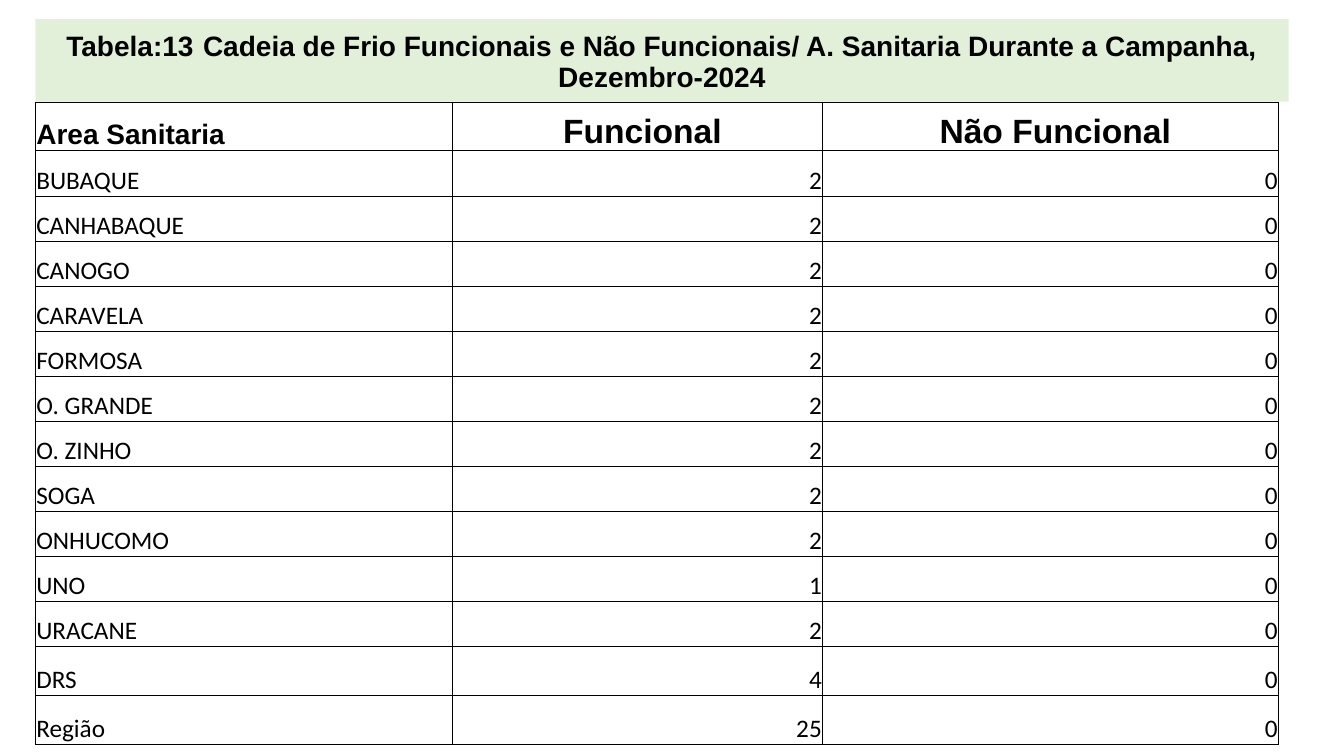
from lxml import etree
from pptx import Presentation
from pptx.dml.color import RGBColor
from pptx.enum.text import MSO_ANCHOR, MSO_AUTO_SIZE, PP_ALIGN
from pptx.oxml.ns import qn
from pptx.util import Inches, Pt

LEFT, CENTER, RIGHT = PP_ALIGN.LEFT, PP_ALIGN.CENTER, PP_ALIGN.RIGHT
MIDDLE, BOTTOM = MSO_ANCHOR.MIDDLE, MSO_ANCHOR.BOTTOM
NO_AUTOFIT = MSO_AUTO_SIZE.NONE
TITLE_ONLY_LAYOUT = 5

COLORS = {"text": "000000", "border": "000000", "banner": "E2F0D9", "summary": "FFFFFF"}
HEADING_FONT, BODY_FONT = "Arial", "Calibri"

# Positions and sizes are percentages of the slide's width or height.
MARGIN = 2.63
BANNER_TOP, BANNER_WIDTH, BANNER_HEIGHT = 2.53, 93.25, 10.93
TABLE_TOP = 13.47
COLUMN_WIDTHS = [31.06, 27.53, 33.91]
TALL_ROW, AREA_ROW = 6.48, 5.96

TITLE_RUNS = [
    ("Tabela:13", 20),
    (" ", 24),
    ("Cadeia de Frio Funcionais e Não Funcionais/ A. Sanitaria "
     "Durante a Campanha, Dezembro-2024", 20),
]
HEADERS = [("Area Sanitaria", 20, LEFT), (" Funcional", 24, CENTER),
           (" Não Funcional", 24, CENTER)]
AREAS = [
    ("BUBAQUE", 2, 0), ("CANHABAQUE", 2, 0), ("CANOGO", 2, 0), ("CARAVELA", 2, 0),
    ("FORMOSA", 2, 0), ("O. GRANDE", 2, 0), ("O. ZINHO", 2, 0), ("SOGA", 2, 0),
    ("ONHUCOMO", 2, 0), ("UNO", 1, 0), ("URACANE", 2, 0),
]
DEPARTMENT = ("DRS", 4, 0)


def add_text(paragraph, text, size=18, font=BODY_FONT, bold=False, align=LEFT):
    paragraph.alignment = align
    run = paragraph.add_run()
    run.text = text
    run.font.name = font
    run.font.size = Pt(size)
    run.font.bold = bold
    run.font.color.rgb = RGBColor.from_string(COLORS["text"])


def set_borders(cell, width=0.5):
    properties = cell._tc.get_or_add_tcPr()
    for index, side in enumerate(("a:lnL", "a:lnR", "a:lnT", "a:lnB")):
        line = etree.Element(qn(side), w=str(Pt(width)))
        fill = etree.SubElement(line, qn("a:solidFill"))
        etree.SubElement(fill, qn("a:srgbClr"), val=COLORS["border"])
        properties.insert(index, line)


class SlideBuilder:
    def __init__(self, presentation):
        self.width = presentation.slide_width
        self.height = presentation.slide_height
        layout = presentation.slide_layouts[TITLE_ONLY_LAYOUT]
        self.slide = presentation.slides.add_slide(layout)

    def across(self, percent):
        return round(self.width * percent / 100)

    def down(self, percent):
        return round(self.height * percent / 100)

    def title(self, runs):
        banner = self.slide.shapes.title
        banner.left, banner.top = self.across(MARGIN), self.down(BANNER_TOP)
        banner.width, banner.height = self.across(BANNER_WIDTH), self.down(BANNER_HEIGHT)
        banner.fill.solid()
        banner.fill.fore_color.rgb = RGBColor.from_string(COLORS["banner"])
        frame = banner.text_frame
        frame.word_wrap = True
        frame.auto_size = NO_AUTOFIT
        frame.vertical_anchor = MIDDLE
        paragraph = frame.paragraphs[0]
        paragraph.line_spacing = 0.9
        for text, size in runs:
            add_text(paragraph, text, size=size, font=HEADING_FONT, bold=True, align=CENTER)

    def cell(self, cell, text, fill=None, **text_format):
        cell.vertical_anchor = BOTTOM
        cell.margin_left = cell.margin_right = cell.margin_top = Inches(0.01)
        cell.margin_bottom = 0
        if fill:
            cell.fill.solid()
            cell.fill.fore_color.rgb = RGBColor.from_string(fill)
        else:
            cell.fill.background()
        set_borders(cell)
        add_text(cell.text_frame.paragraphs[0], text, **text_format)

    def table(self, headers, areas, summary):
        row_heights = [TALL_ROW] + [AREA_ROW] * len(areas) + [TALL_ROW] * len(summary)
        table = self.slide.shapes.add_table(
            len(row_heights), len(headers), self.across(MARGIN), self.down(TABLE_TOP),
            self.across(sum(COLUMN_WIDTHS)), self.down(sum(row_heights))).table
        table.first_row = table.horz_banding = False
        for column, width in zip(table.columns, COLUMN_WIDTHS):
            column.width = self.across(width)
        for row, height in zip(table.rows, row_heights):
            row.height = self.down(height)

        for column, (text, size, align) in enumerate(headers):
            self.cell(table.cell(0, column), text, size=size, font=HEADING_FONT,
                      bold=True, align=align)
        for row, record in enumerate(areas + summary, start=1):
            fill = COLORS["summary"] if row > len(areas) else None
            for column, value in enumerate(record):
                self.cell(table.cell(row, column), str(value), fill=fill,
                          align=RIGHT if column else LEFT)


def main():
    presentation = Presentation()
    presentation.slide_width, presentation.slide_height = Inches(13.33), Inches(7.5)
    builder = SlideBuilder(presentation)
    builder.title(TITLE_RUNS)
    _, functional, broken = zip(*AREAS, DEPARTMENT)
    region = ("Região", sum(functional), sum(broken))
    builder.table(HEADERS, AREAS, [DEPARTMENT, region])
    presentation.save("out.pptx")


if __name__ == "__main__":
    main()
